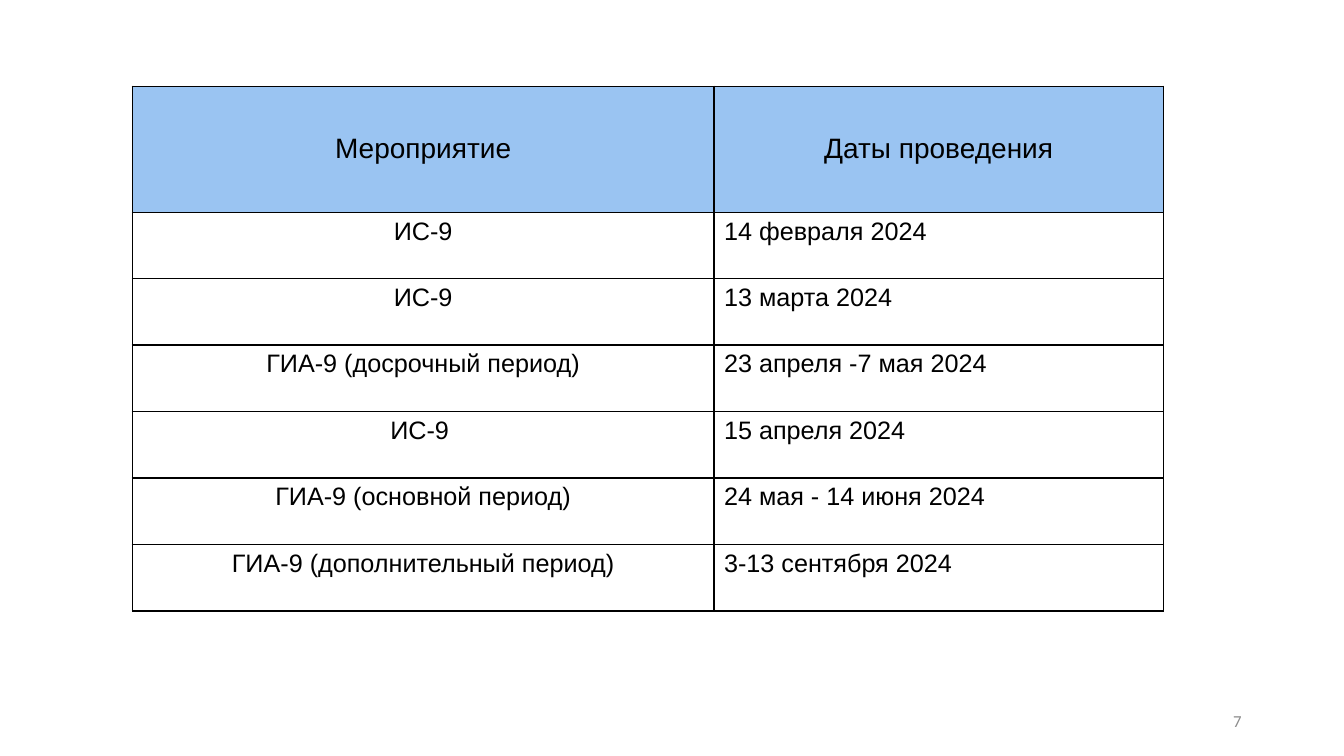
from pptx import Presentation
from pptx.dml.color import RGBColor
from pptx.enum.text import MSO_ANCHOR, PP_ALIGN
from pptx.oxml.ns import qn
from pptx.util import Pt
from lxml.etree import SubElement

PX = 9525  # EMU in one px, at 96 px to the inch
BLACK = RGBColor(0x00, 0x00, 0x00)
GRAY = RGBColor(0x8C, 0x8C, 0x8C)
HEADER_BLUE = RGBColor(0x9A, 0xC4, 0xF2)

HEADER_HEIGHT = 120
EVENT_WIDTH = 554
SCHEDULE = [
    ("Мероприятие", "Даты проведения"),
    ("ИС-9", "14 февраля 2024"),
    ("ИС-9", "13 марта 2024"),
    ("ГИА-9 (досрочный период)", "23 апреля -7 мая 2024"),
    ("ИС-9 ", "15 апреля 2024"),
    ("ГИА-9 (основной период)", "24 мая - 14 июня 2024"),
    ("ГИА-9 (дополнительный период)", "3-13 сентября 2024"),
]


def set_font(p, name, size, color):
    p.font.name = name
    p.font.size = Pt(size)
    p.font.color.rgb = color


def add_borders(cell, color, width):
    tcPr = cell._tc.get_or_add_tcPr()
    for side in ("lnL", "lnR", "lnT", "lnB"):
        ln = SubElement(tcPr, qn(f"a:{side}"), w=str(Pt(width)))
        fill = SubElement(ln, qn("a:solidFill"))
        SubElement(fill, qn("a:srgbClr"), val=str(color))


def fill_cell(cell, text, is_header, is_event):
    add_borders(cell, BLACK, 1)
    if is_header:
        cell.fill.solid()
        cell.fill.fore_color.rgb = HEADER_BLUE
    else:
        cell.fill.background()
    cell.vertical_anchor = MSO_ANCHOR.MIDDLE if is_header else MSO_ANCHOR.TOP
    cell.text = text
    p = cell.text_frame.paragraphs[0]
    p.alignment = PP_ALIGN.CENTER if is_header or is_event else PP_ALIGN.LEFT
    set_font(p, "Arial", 20 if is_header else 18, BLACK)
    p.font.bold = False


def add_schedule(s, x, y, w, h):
    frame = s.shapes.add_table(len(SCHEDULE), 2, x * PX, y * PX, w * PX, h * PX)
    table = frame.table
    table.first_row = table.horz_banding = False
    table.columns[0].width = EVENT_WIDTH * PX
    table.columns[1].width = (w - EVENT_WIDTH) * PX
    row_height = (h - HEADER_HEIGHT) * PX // (len(SCHEDULE) - 1)
    for i, texts in enumerate(SCHEDULE):
        table.rows[i].height = row_height if i else HEADER_HEIGHT * PX
        for j, text in enumerate(texts):
            fill_cell(table.cell(i, j), text, i == 0, j == 0)


def add_page_number(s, x, y, w, h):
    tf = s.shapes.add_textbox(x * PX, y * PX, w * PX, h * PX).text_frame
    tf.word_wrap = True
    tf.vertical_anchor = MSO_ANCHOR.MIDDLE
    p = tf.paragraphs[0]
    p.text = "7"
    p.alignment = PP_ALIGN.RIGHT
    set_font(p, "Calibri", 12, GRAY)


def main():
    prs = Presentation()
    prs.slide_width, prs.slide_height = 1280 * PX, 720 * PX
    s = prs.slides.add_slide(prs.slide_layouts[6])
    add_schedule(s, 126, 82, 982, 500)
    add_page_number(s, 904, 667, 288, 38)
    prs.save("out.pptx")


if __name__ == "__main__":
    main()
